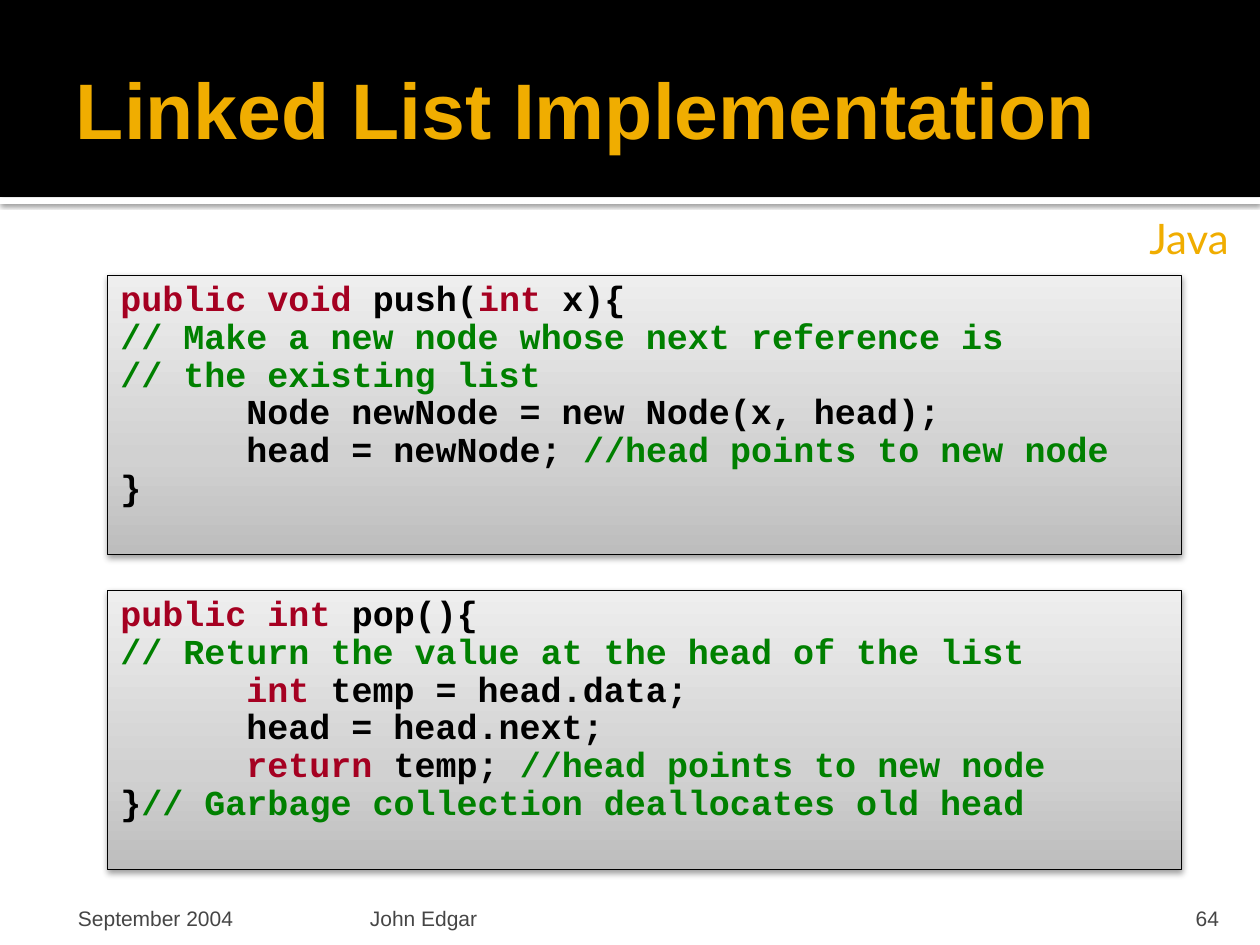
from pptx import Presentation
from pptx import util as u
from pptx.dml.color import RGBColor
from pptx.enum import shapes, text
from pptx.oxml import parse_xml
from pptx.oxml.ns import nsdecls

PX = 914400 / 126
BLACK = RGBColor(0, 0, 0)
WHITE = RGBColor(255, 255, 255)
AMBER = RGBColor(0xF0, 0xAD, 0x00)
GREY = RGBColor(0x45, 0x45, 0x45)
KEYWORD = RGBColor(0xA5, 0x00, 0x21)
COMMENT = RGBColor(0x00, 0x80, 0x00)
GRADIENT = ((0, "BDBDBD"), (35, "D1D1D1"), (100, "EEEEEE"))
CODE_INDENT = 126

TITLE = "Linked List Implementation"
LANGUAGE = "Java"
PUSH = [
    [("public void", KEYWORD), (" push(", BLACK), ("int", KEYWORD), (" x){", BLACK)],
    [("// Make a new node whose next reference is", COMMENT)],
    [("// the existing list", COMMENT)],
    [("\tNode newNode = new Node(x, head);", BLACK)],
    [("\thead = newNode; ", BLACK), ("//head points to new node", COMMENT)],
    [("}", BLACK)],
]
POP = [
    [("public int ", KEYWORD), ("pop(){", BLACK)],
    [("// Return the value at the head of the list", COMMENT)],
    [("\tint ", KEYWORD), ("temp = head.data;", BLACK)],
    [("\thead = head.next;", BLACK)],
    [("\treturn ", KEYWORD), ("temp; ", BLACK), ("//head points to new node", COMMENT)],
    [("}", BLACK), ("// Garbage collection deallocates old head", COMMENT)],
]
# words, left, width, left inset, right inset, alignment
FOOTER = [
    ("September 2004", 63, 294, 15, 6, text.PP_ALIGN.LEFT),
    ("John Edgar", 364, 759, 6, 6, text.PP_ALIGN.LEFT),
    ("64", 1131, 101, 13, 13, text.PP_ALIGN.RIGHT),
]


def px(*lengths):
    return [u.Emu(round(n * PX)) for n in lengths]


def set_insets(frame, left, top, right, bottom):
    (frame.margin_left, frame.margin_top,
     frame.margin_right, frame.margin_bottom) = px(left, top, right, bottom)


def set_font(paragraph, name, size, color=None, bold=False):
    font = paragraph.font
    font.name, font.size, font.bold = name, u.Pt(size), bold
    if color is not None:
        font.color.rgb = color


def add_rectangle(*box):
    shape = slide.shapes.add_shape(shapes.MSO_SHAPE.RECTANGLE, *px(*box))
    shape.shadow.inherit = False
    shape.line.fill.background()
    return shape


def add_bar(color, *box):
    bar = add_rectangle(*box)
    bar.fill.solid()
    bar.fill.fore_color.rgb = color
    return bar


def add_shadow(shape, opacity, blur, distance):
    """Cast a black shadow straight down; blur and distance are in points."""
    shape._element.spPr.find("{*}effectLst").append(parse_xml(
        f'<a:outerShdw {nsdecls("a")} blurRad="{u.Pt(blur)}" dist="{u.Pt(distance)}" '
        f'dir="5400000" algn="t" rotWithShape="0"><a:srgbClr val="000000">'
        f'<a:alpha val="{opacity * 1000}"/></a:srgbClr></a:outerShdw>'))


def add_gradient(shape):
    stops = "".join(f'<a:gs pos="{at * 1000}"><a:srgbClr val="{color}"/></a:gs>'
                    for at, color in GRADIENT)
    outline = shape._element.spPr.find("{*}prstGeom")
    outline.addnext(parse_xml(
        f'<a:gradFill {nsdecls("a")} rotWithShape="1"><a:gsLst>{stops}</a:gsLst>'
        '<a:lin ang="16200000" scaled="1"/></a:gradFill>'))


def add_tab_stop(paragraph, position):
    paragraph._p.get_or_add_pPr().append(parse_xml(
        f'<a:tabLst {nsdecls("a")}><a:tab pos="{px(position)[0]}" algn="l"/></a:tabLst>'))


def add_code(lines, top):
    panel = add_rectangle(108, top, 1074, 280)
    add_gradient(panel)
    panel.line.color.rgb = BLACK
    panel.line.width = u.Pt(0.5)
    add_shadow(panel, 38, 3.5, 2)
    frame = panel.text_frame
    frame.word_wrap = True
    frame.vertical_anchor = text.MSO_ANCHOR.TOP
    for i, line in enumerate(lines):
        paragraph = frame.add_paragraph() if i else frame.paragraphs[0]
        add_tab_stop(paragraph, CODE_INDENT)
        paragraph.alignment = text.PP_ALIGN.LEFT
        paragraph.line_spacing = 0.9
        set_font(paragraph, "Courier New", 20, bold=True)
        for words, color in line:
            run = paragraph.add_run()
            run.text = words
            run.font.color.rgb = color


def add_label(words, *box):
    frame = slide.shapes.add_textbox(*px(*box)).text_frame
    frame.text = words
    return frame


prs = Presentation()
prs.slide_width, prs.slide_height = px(1260, 945)
slide = prs.slides.add_slide(prs.slide_layouts[5])

add_shadow(add_bar(WHITE, 0, 198, 1260, 6), 60, 2.5, 0.8)
add_bar(BLACK, 0, 0, 1260, 197)

title = slide.shapes.title
slide.shapes._spTree.append(title._element)  # in front of the bars
title.left, title.top, title.width, title.height = px(63, 22, 1134, 173)
heading = title.text_frame
heading.text = TITLE
heading.vertical_anchor = text.MSO_ANCHOR.MIDDLE
set_insets(heading, 13, 6, 6, 6)
heading.paragraphs[0].alignment = text.PP_ALIGN.LEFT
set_font(heading.paragraphs[0], "Arial", 45, AMBER, bold=True)

for words, left, width, inset_left, inset_right, alignment in FOOTER:
    label = add_label(words, left, 893, width, 38)
    label.word_wrap = True
    label.vertical_anchor = text.MSO_ANCHOR.BOTTOM
    set_insets(label, inset_left, 6, inset_right, 0)
    label.paragraphs[0].alignment = alignment
    set_font(label.paragraphs[0], "Arial", 12, GREY)

for i, lines in enumerate((PUSH, POP)):
    add_code(lines, 275 + 315 * i)

language = add_label(LANGUAGE, 1137, 206, 123, 64)
language.word_wrap = False
set_font(language.paragraphs[0], "Lato", 24, AMBER)

prs.save("out.pptx")
